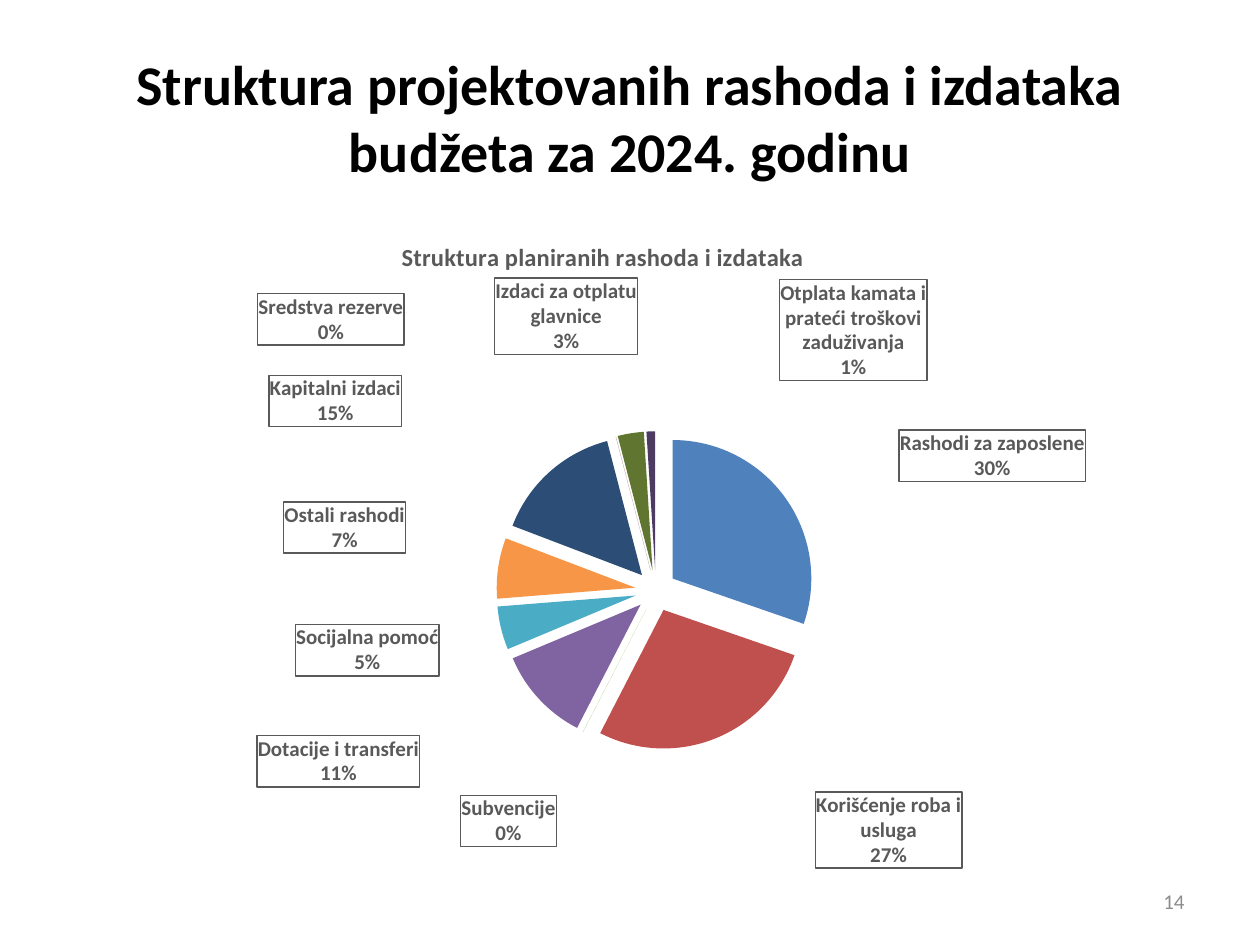
"""Build a slide with an exploded pie of planned budget spending."""
from math import cos, pi, sin

from pptx import Presentation
from pptx.chart.data import CategoryChartData as Data
from pptx.dml.color import RGBColor as Rgb
from pptx.enum.chart import XL_CHART_TYPE as Kind, XL_LABEL_POSITION as Pos
from pptx.enum.text import MSO_ANCHOR as Anchor, PP_ALIGN as Align
from pptx.oxml import parse_xml
from pptx.oxml.ns import nsdecls, qn
from pptx.util import Inches, Pt

FONT = "Calibri"
GREY = "595959"
HEAD = "Struktura projektovanih rashoda i izdataka budžeta za 2024. godinu"
NAME = "Struktura planiranih rashoda i izdataka"
FRAME = (1.14, 1.79, 8.05, 5.27)
PLOT = {"x": 0.23, "y": 0.31, "w": 0.55, "h": 0.48}
HUB = (5.2, 4.68)
REACH = 1.3
TINY = 0.01
PARTS = [
    ("Rashodi za zaposlene", 30, "4F81BD", (7.85, 3.62, 1.48, 0.41)),
    ("Korišćenje roba i usluga", 27, "C0504D", (6.46, 6.56, 1.17, 0.61)),
    ("Subvencije", TINY, "9BBB59", (4.04, 6.49, 0.76, 0.41)),
    ("Dotacije i transferi", 11, "8064A2", (2.69, 6.02, 1.3, 0.41)),
    ("Socijalna pomoć", 5, "4BACC6", (2.93, 5.15, 1.14, 0.41)),
    ("Ostali rashodi", 7, "F79646", (2.75, 4.18, 0.97, 0.41)),
    ("Kapitalni izdaci", 15, "2C4D75", (2.67, 3.19, 1.06, 0.41)),
    ("Sredstva rezerve", TINY, "772C2A", (3.21, 2.55, 1.17, 0.41)),
    ("Izdaci za otplatu glavnice", 3, "5F7530", (5.06, 2.52, 1.14, 0.61)),
    ("Otplata kamata i prateći troškovi zaduživanja", 1, "4D3B62",
     (6.77, 2.64, 1.17, 0.8)),
]


def paint(obj, color):
    obj.rgb = Rgb.from_string(color)


def write(para, text, size, color, bold=False):
    run = para.add_run()
    run.text = text
    font = run.font
    font.name, font.size, font.bold = FONT, Pt(size), bold
    paint(font.color, color)


def layout(head="", **vals):
    rows = "".join(f'<c:{key} val="{val}"/>' for key, val in vals.items())
    return parse_xml(f'<c:layout {nsdecls("c")}><c:manualLayout>{head}{rows}'
                     '</c:manualLayout></c:layout>')


def drop(elem):
    for old in elem.findall(qn("c:layout")):
        elem.remove(old)


def shift(turn, box):
    x, y, wide, high = box
    dx, dy = sin(turn), -cos(turn)
    side = 0 if abs(dx) < sin(pi / 8) else (1 if dx > 0 else -1)
    rise = 0 if abs(dy) < sin(pi / 36) else (1 if dy > 0 else -1)
    left = HUB[0] + REACH * dx + side * wide / 2
    top = HUB[1] + REACH * dy + rise * high / 2
    return {"x": round((x - left) / FRAME[2], 3), "y": round((y - top) / FRAME[3], 3)}


def frame():
    return parse_xml(
        f'<c:spPr {nsdecls("c", "a")}><a:solidFill><a:srgbClr val="FFFFFF"/></a:solidFill>'
        f'<a:ln w="9525"><a:solidFill><a:srgbClr val="{GREY}"/></a:solidFill></a:ln></c:spPr>')


def label_parts(labels):
    labels.show_percentage = labels.show_category_name = True
    labels.show_value = False
    labels.number_format, labels.number_format_is_linked = "0%", False
    labels.position = Pos.OUTSIDE_END
    font = labels.font
    font.name, font.size, font.bold = FONT, Pt(12), True
    paint(font.color, GREY)
    elem = labels._element
    text = elem.find(qn("c:txPr"))
    text.find(qn("a:bodyPr")).set("wrap", "square")
    text.addprevious(frame())
    flags = {"LegendKey": 0, "Val": 0, "CatName": 1, "SerName": 0, "Percent": 1, "BubbleSize": 0}
    shows = "".join(f'<c:show{key} val="{val}"/>' for key, val in flags.items())
    total, past = sum(part[1] for part in PARTS), 0
    first = elem[0]
    for num, (_, val, _, box) in enumerate(PARTS):
        turn = 2 * pi * (past + val / 2) / total
        past += val
        label = parse_xml(
            f'<c:dLbl {nsdecls("c")}><c:idx val="{num}"/><c:numFmt formatCode="0%" sourceLinked="0"/>'
            f'<c:dLblPos val="outEnd"/>{shows}<c:separator>\n</c:separator></c:dLbl>')
        label[0].addnext(layout(**shift(turn, box)))
        spot = label.find(qn("c:dLblPos"))
        spot.addprevious(frame())
        spot.addprevious(parse_xml(
            f'<c:txPr {nsdecls("c", "a")}><a:bodyPr wrap="square"/><a:p><a:pPr><a:defRPr sz="1200" b="1">'
            f'<a:solidFill><a:srgbClr val="{GREY}"/></a:solidFill><a:latin typeface="{FONT}"/>'
            '</a:defRPr></a:pPr><a:endParaRPr/></a:p></c:txPr>'))
        first.addprevious(label)
    lines = elem.find(qn("c:showLeaderLines"))
    if lines is None:
        lines = parse_xml(f'<c:showLeaderLines {nsdecls("c")}/>')
        elem.append(lines)
    lines.set("val", "0")
    lines.addprevious(parse_xml(f'<c:separator {nsdecls("c")}>\n</c:separator>'))


def add_pie(slide):
    data = Data(number_format="#,##0")
    data.categories = [part[0] for part in PARTS]
    data.add_series("Series 1", [part[1] for part in PARTS])
    chart = slide.shapes.add_chart(Kind.PIE, *map(Inches, FRAME), data).chart
    chart.font.name, chart.font.size = FONT, Pt(10)
    paint(chart.font.color, "000000")
    chart.has_legend = False
    write(chart.chart_title.text_frame.paragraphs[0], NAME, 14, GREY, True)
    edge = '<c:xMode val="edge"/><c:yMode val="edge"/>'
    title = chart.chart_title._element
    drop(title)
    title.find(qn("c:tx")).addnext(layout(edge, x=0.25, y=0.015))
    plot = chart.plots[0]
    plot.vary_by_categories = True
    area = plot._element.getparent()
    drop(area)
    area.insert(0, layout('<c:layoutTarget val="inner"/>' + edge, **PLOT))
    ser = plot.series[0]
    for num, part in enumerate(PARTS):
        fill = ser.points[num].format.fill
        fill.solid()
        paint(fill.fore_color, part[2])
    ser._element.find(qn("c:dPt")).addprevious(
        parse_xml(f'<c:explosion {nsdecls("c")} val="15"/>'))
    label_parts(ser.data_labels)


def main():
    deck = Presentation()
    deck.slide_width, deck.slide_height = Inches(10), Inches(7.5)
    slide = deck.slides.add_slide(deck.slide_layouts[5])
    title = slide.shapes.title
    title.left, title.top, title.width, title.height = map(Inches, (0.5, 0.3, 9, 1.25))
    title.text_frame.vertical_anchor = Anchor.MIDDLE
    para = title.text_frame.paragraphs[0]
    para.alignment = Align.CENTER
    write(para, HEAD, 32, "000000", True)
    add_pie(slide)
    page = slide.shapes.add_textbox(*map(Inches, (7.17, 6.95, 2.33, 0.4))).text_frame
    page.word_wrap, page.vertical_anchor = True, Anchor.MIDDLE
    page.paragraphs[0].alignment = Align.RIGHT
    write(page.paragraphs[0], "14", 12, "8C8C8C")
    deck.save("out.pptx")


if __name__ == "__main__":
    main()
